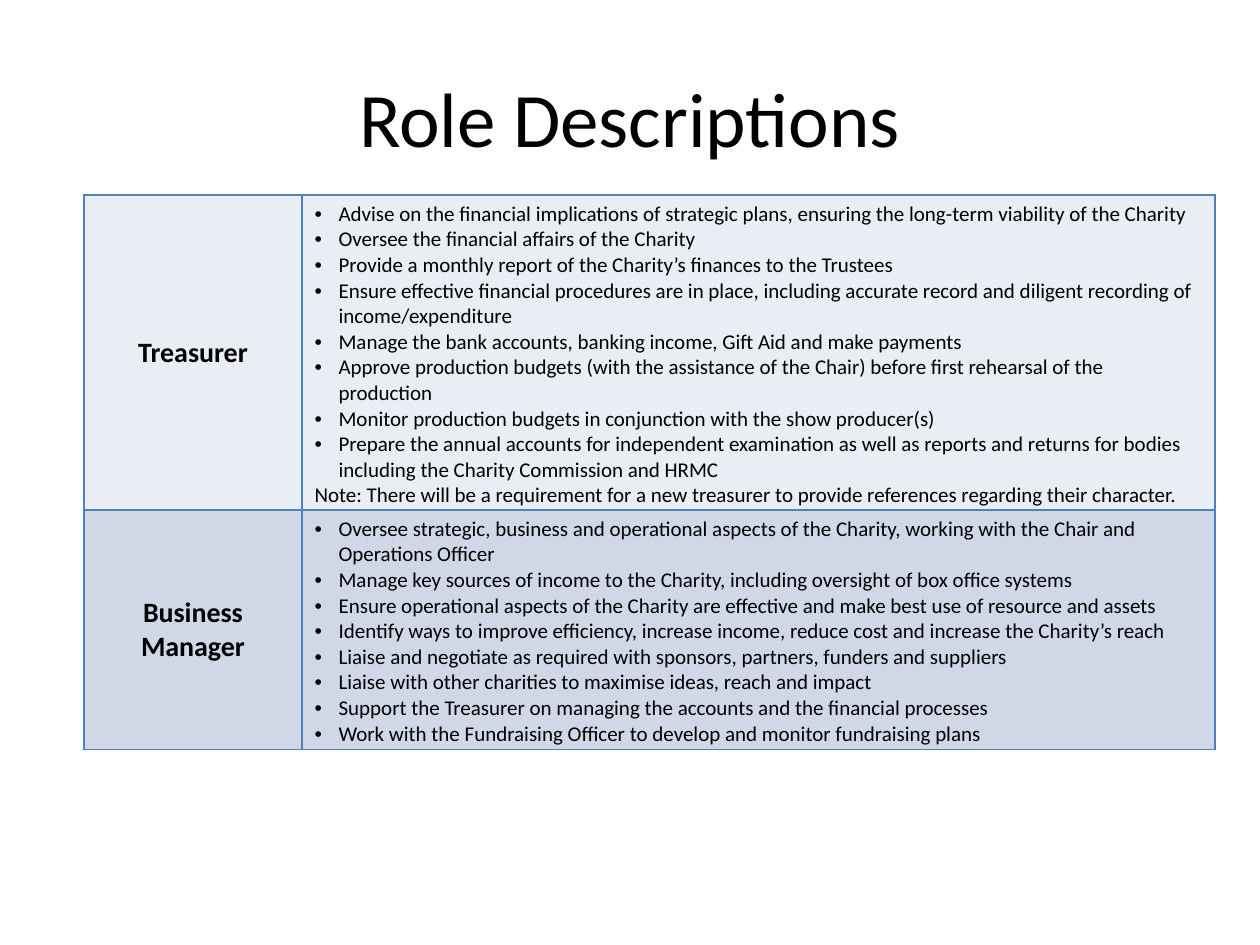
from lxml import etree
from pptx import Presentation, util as u
from pptx.dml.color import RGBColor
from pptx.enum import text
from pptx.oxml import ns

COLORS = {"text": "000000", "border": "4F81BD", "light": "E9EDF4", "dark": "D0D8E8"}
ROLES = [
    ("Treasurer", 304, "light", [
        "Advise on the financial implications of strategic plans, ensuring the long-term viability of the Charity",
        "Oversee the financial affairs of the Charity",
        "Provide a monthly report of the Charity’s finances to the Trustees",
        "Ensure effective financial procedures are in place, including accurate record and diligent "
        "recording of income/expenditure",
        "Manage the bank accounts, banking income, Gift Aid and make payments",
        "Approve production budgets (with the assistance of the Chair) before first rehearsal of the production",
        "Monitor production budgets in conjunction with the show producer(s)",
        "Prepare the annual accounts for independent examination as well as reports and returns for bodies "
        "including the Charity Commission and HRMC",
    ], "Note: There will be a requirement for a new treasurer to provide references regarding their character."),
    ("Business Manager", 232, "dark", [
        "Oversee strategic, business and operational aspects of the Charity, working with the Chair and "
        "Operations Officer",
        "Manage key sources of income to the Charity, including oversight of box office systems",
        "Ensure operational aspects of the Charity are effective and make best use of resource and assets",
        "Identify ways to improve efficiency, increase income, reduce cost and increase the Charity’s reach",
        "Liaise and negotiate as required with sponsors, partners, funders and suppliers",
        "Liaise with other charities to maximise ideas, reach and impact",
        "Support the Treasurer on managing the accounts and the financial processes",
        "Work with the Fundraising Officer to develop and monitor fundraising plans",
    ], None),
]


def px(n):
    return u.Emu(round(n * 914400 / 126))


class Deck:
    font = "Calibri"
    indent = 24

    def __init__(self, prs):
        self.slide = prs.slides.add_slide(prs.slide_layouts[6])

    def style(self, p, size, bold=False, align=text.PP_ALIGN.LEFT):
        p.alignment = align
        for r in p.runs:
            r.font.name, r.font.size, r.font.bold = self.font, u.Pt(size), bold
            r.font.color.rgb = RGBColor.from_string(COLORS["text"])

    def bullet(self, p):
        pPr = p._p.get_or_add_pPr()
        pPr.set("marL", str(px(self.indent)))
        pPr.set("indent", str(-px(self.indent)))
        etree.SubElement(pPr, ns.qn("a:buFont"), typeface="Arial")
        etree.SubElement(pPr, ns.qn("a:buChar"), char="•")

    def title(self, words, x, y, w, h):
        tf = self.slide.shapes.add_textbox(px(x), px(y), px(w), px(h)).text_frame
        tf.word_wrap = True
        tf.vertical_anchor = text.MSO_ANCHOR.MIDDLE
        tf.text = words
        self.style(tf.paragraphs[0], 44, align=text.PP_ALIGN.CENTER)

    def paint(self, cell, color):
        """Fill the cell and draw a thin border on its four sides."""
        cell.fill.solid()
        cell.fill.fore_color.rgb = RGBColor.from_string(COLORS[color])
        tcPr = cell._tc.get_or_add_tcPr()
        for i, side in enumerate(("lnL", "lnR", "lnT", "lnB")):
            ln = etree.Element(ns.qn("a:" + side), w=str(u.Pt(1)))
            fill = etree.SubElement(ln, ns.qn("a:solidFill"))
            etree.SubElement(fill, ns.qn("a:srgbClr"), val=COLORS["border"])
            tcPr.insert(i, ln)

    def role_table(self, roles, x, y, widths):
        height = sum(role[1] for role in roles)
        table = self.slide.shapes.add_table(
            len(roles), len(widths), px(x), px(y), px(sum(widths)), px(height)).table
        table.first_row = table.horz_banding = False
        for column, width in zip(table.columns, widths):
            column.width = px(width)
        for row, (name, row_height, color, duties, note) in zip(table.rows, roles):
            row.height = px(row_height)
            name_cell, duty_cell = row.cells
            name_cell.text = name
            name_cell.vertical_anchor = text.MSO_ANCHOR.MIDDLE
            self.style(name_cell.text_frame.paragraphs[0], 16, True, text.PP_ALIGN.CENTER)
            duty_cell.text = "\n".join(duties + ([note] if note else []))
            for i, p in enumerate(duty_cell.text_frame.paragraphs):
                self.style(p, 12)
                if i < len(duties):
                    self.bullet(p)
            for cell in row.cells:
                self.paint(cell, color)


def main():
    prs = Presentation()
    prs.slide_width, prs.slide_height = px(1260), px(945)
    deck = Deck(prs)
    deck.title("Role Descriptions", 63, 38, 1134, 158)
    deck.role_table(ROLES, 84, 195, (218, 913))
    prs.save("out.pptx")


if __name__ == "__main__":
    main()
